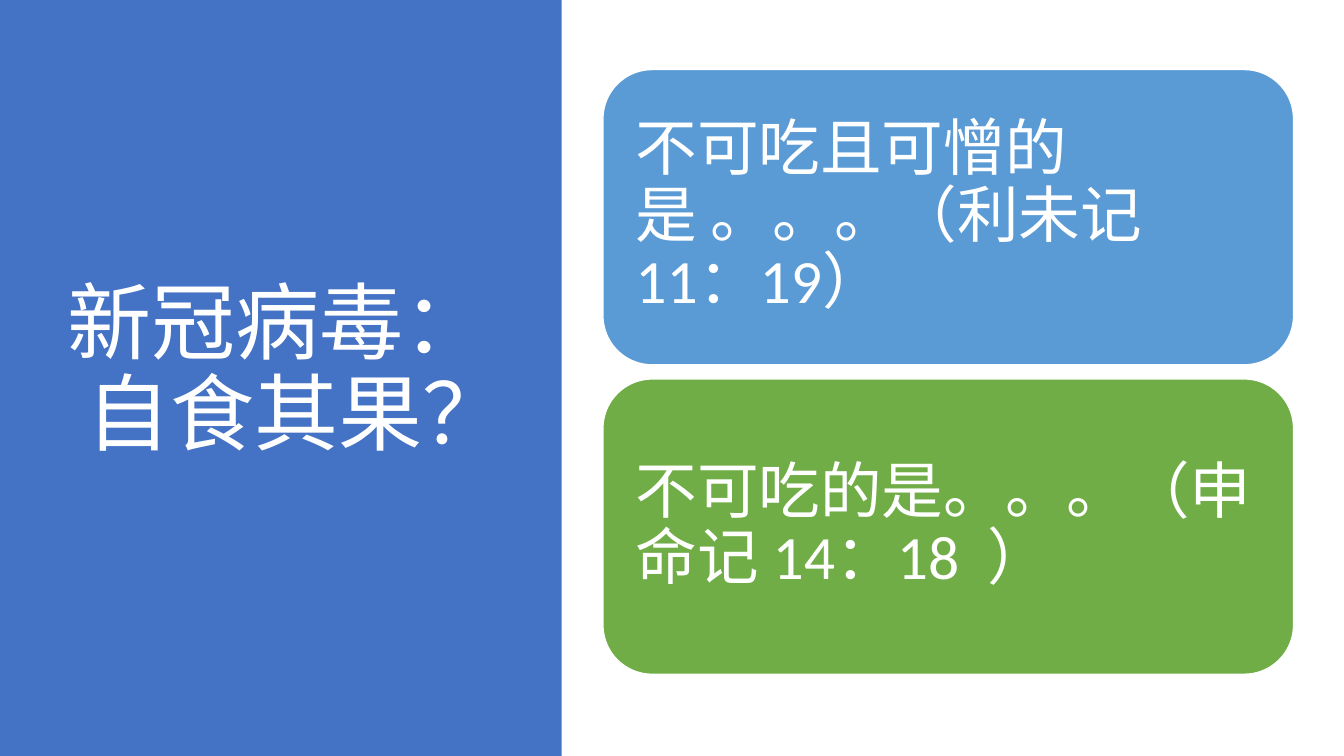
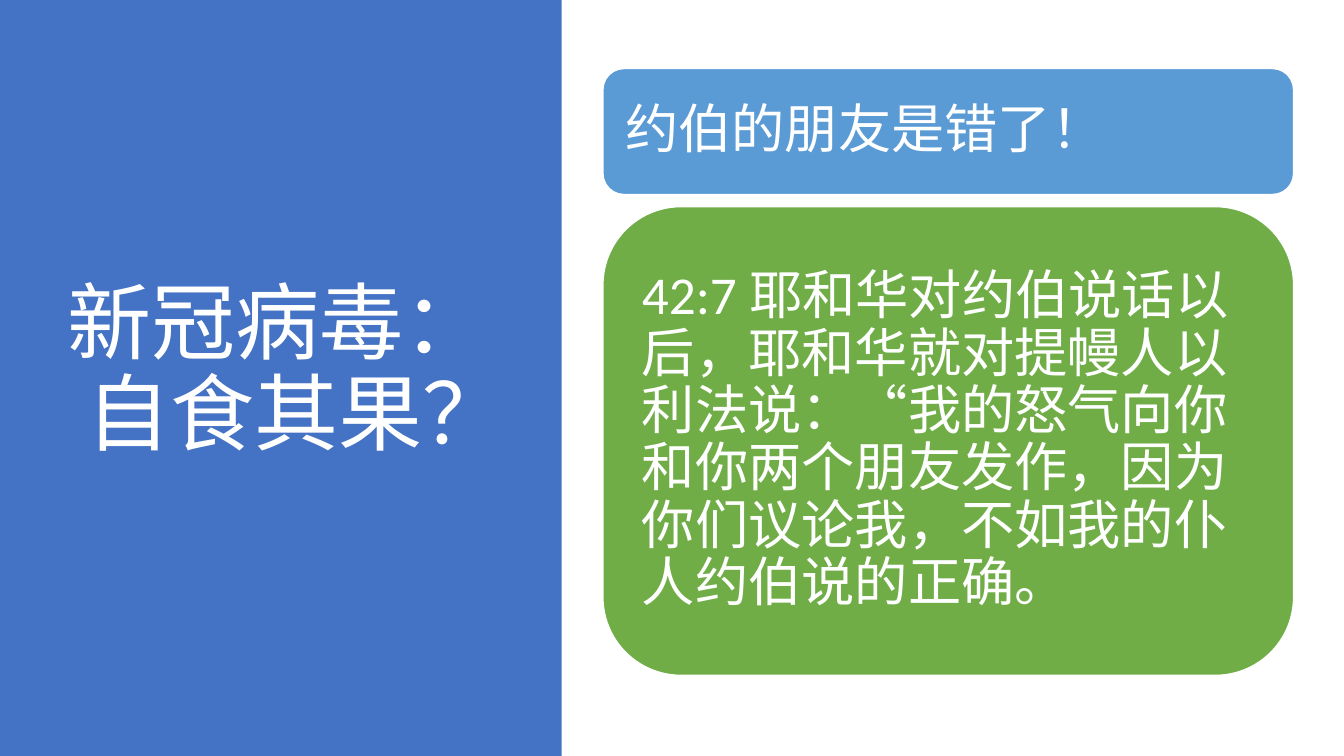
from pptx import Presentation
from pptx.dml.color import RGBColor
from pptx.enum.lang import MSO_LANGUAGE_ID
from pptx.enum.shapes import MSO_SHAPE
from pptx.enum.text import MSO_ANCHOR, MSO_AUTO_SIZE, PP_ALIGN
from pptx.util import Inches, Pt

RECT, ROUNDED = MSO_SHAPE.RECTANGLE, MSO_SHAPE.ROUNDED_RECTANGLE
MIDDLE, LEFT, NO_FIT = MSO_ANCHOR.MIDDLE, PP_ALIGN.LEFT, MSO_AUTO_SIZE.NONE
CHINESE = MSO_LANGUAGE_ID.SIMPLIFIED_CHINESE

FONT = "Calibri"
WHITE, PANEL = "FFFFFF", "4472C4"
CARD_COLORS = ["5B9BD5", "70AD47"]
TITLE_ONLY = 5
TITLE = "新冠病毒： 自食其果？"
CARD_LEFT, CARD_WIDTH = 5.98, 6.85

SLIDES = [
    {"size": 44, "inset": 0.18, "top": 0.69, "gap": 0.14, "cards": [
        (2.93, "不可吃且可憎的是 。。。（利未记 11：19）"),
        (2.93, "不可吃的是。。。（申命记 14：18\u00a0 ）"),
    ]},
    {"size": 38, "inset": 0.16, "top": 0.68, "gap": 0.12, "cards": [
        (1.25, "约伯的朋友是错了！"),
        (4.65, "42:7 耶和华对约伯说话以后，耶和华就对提幔人以利法说："
               "“我的怒气向你和你两个朋友发作，因为你们议论我，"
               "不如我的仆人约伯说的正确。"),
    ]},
]


def rgb(value):
    return RGBColor.from_string(value)


def write(shape, text, size, after=0):
    tf = shape.text_frame
    tf.word_wrap = True
    tf.auto_size = NO_FIT
    tf.vertical_anchor = MIDDLE
    p = tf.paragraphs[0]
    p.alignment = LEFT
    p.line_spacing = 0.9
    p.space_after = Pt(after)
    r = p.add_run()
    r.text = text
    r.font.name = FONT
    r.font.size = Pt(size)
    r.font.color.rgb = rgb(WHITE)
    r.font.language_id = CHINESE


def add_block(s, kind, left, top, width, height, color):
    sp = s.shapes.add_shape(kind, Inches(left), Inches(top),
                            Inches(width), Inches(height))
    sp.shadow.inherit = False
    sp.fill.solid()
    sp.fill.fore_color.rgb = rgb(color)
    sp.line.fill.background()
    return sp


def add_title_panel(s):
    title = s.shapes.title
    panel = add_block(s, RECT, 0, 0, 5.57, 7.5, PANEL)
    title.element.addprevious(panel.element)
    title.left, title.top = Inches(0.57), Inches(0.68)
    title.width, title.height = Inches(4.16), Inches(6.02)
    write(title, TITLE, 60)


def add_card(s, top, height, color, text, size, inset):
    card = add_block(s, ROUNDED, CARD_LEFT, top, CARD_WIDTH, height, color)
    card.line.color.rgb = rgb(WHITE)
    card.line.width = Pt(1)
    tf = card.text_frame
    tf.margin_left = tf.margin_right = Inches(inset)
    tf.margin_top = tf.margin_bottom = Inches(inset)
    write(card, text, size, after=0.35 * size)


def add_slide(prs, content):
    s = prs.slides.add_slide(prs.slide_layouts[TITLE_ONLY])
    add_title_panel(s)
    top = content["top"]
    for color, (height, text) in zip(CARD_COLORS, content["cards"]):
        add_card(s, top, height, color, text, content["size"], content["inset"])
        top += height + content["gap"]


def main():
    prs = Presentation()
    prs.slide_width, prs.slide_height = Inches(13.33), Inches(7.5)
    for content in SLIDES:
        add_slide(prs, content)
    prs.save("out.pptx")


if __name__ == "__main__":
    main()
